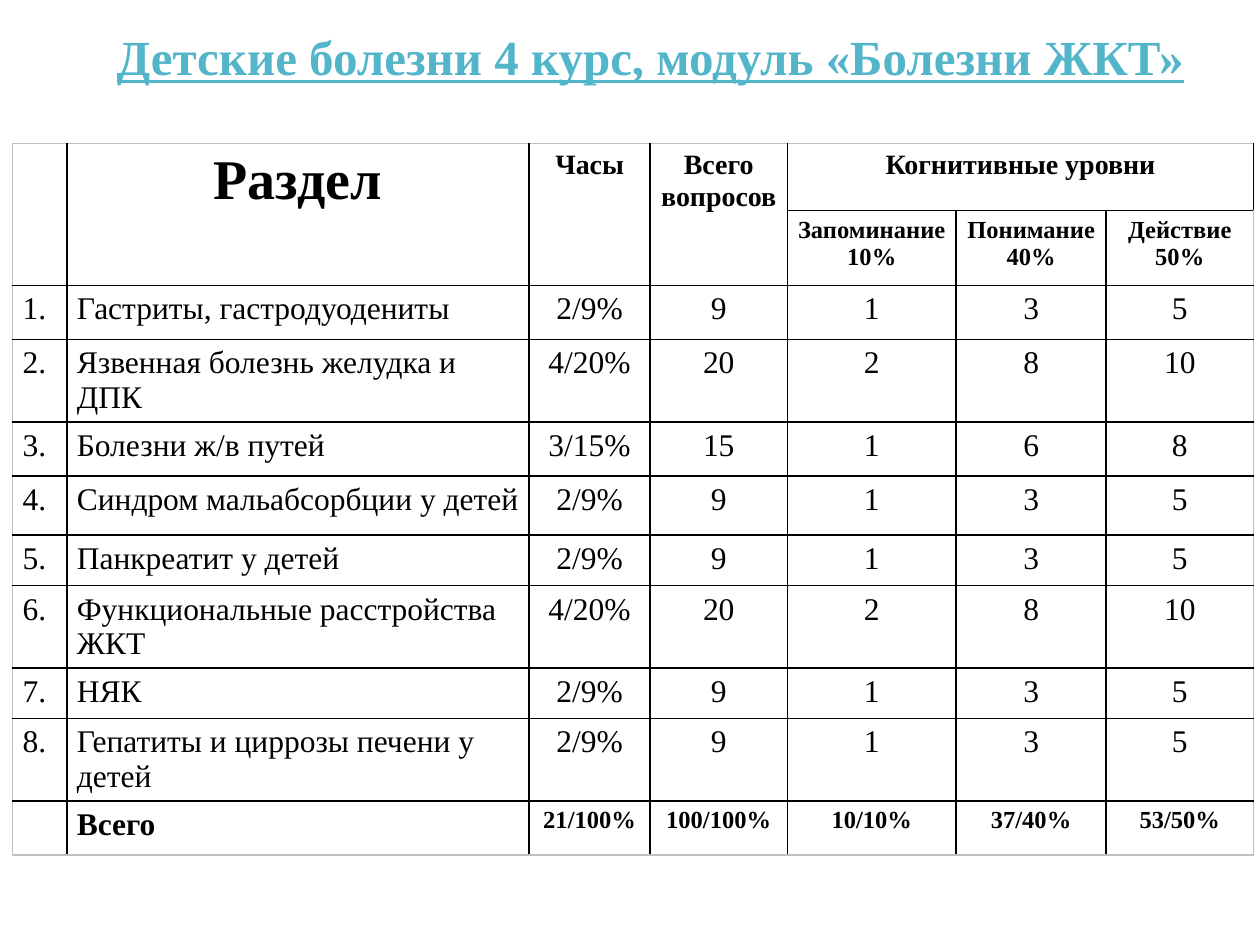
from lxml.etree import SubElement
from pptx import Presentation
from pptx.dml.color import RGBColor
from pptx.enum.text import MSO_ANCHOR, PP_ALIGN
from pptx.oxml.ns import qn
from pptx.util import Inches, Pt

BLACK = RGBColor(0x00, 0x00, 0x00)
FRAME_GREY = RGBColor(0xBF, 0xBF, 0xBF)
TITLE_TEAL = RGBColor(0x53, 0xB5, 0xC9)
FONT = "Times New Roman"


def style_text(frame, size, bold, color, align):
    for paragraph in frame.paragraphs:
        paragraph.alignment = align
        for run in paragraph.runs:
            run.font.name = FONT
            run.font.size = Pt(size)
            run.font.bold = bold
            run.font.color.rgb = color


def add_border(cell, side, color):
    line = SubElement(cell._tc.get_or_add_tcPr(), qn(f"a:ln{side}"), w=str(Pt(1)))
    fill = SubElement(line, qn("a:solidFill"))
    SubElement(fill, qn("a:srgbClr"), val=str(color))


prs = Presentation()
prs.slide_width, prs.slide_height = Inches(10), Inches(7.5)
slide = prs.slides.add_slide(prs.slide_layouts[6])

# Table content: two header rows, eight topics, totals
header = [
    ["", "Раздел", "Часы", "Всего вопросов", "Когнитивные уровни", "", ""],
    ["", "", "", "", "Запоминание\n10%", "Понимание\n40%", "Действие\n50%"],
]
topics = [
    ["Гастриты, гастродуодениты", "2/9%", "9", "1", "3", "5"],
    ["Язвенная болезнь желудка и ДПК", "4/20%", "20", "2", "8", "10"],
    ["Болезни ж/в путей", "3/15%", "15", "1", "6", "8"],
    ["Синдром мальабсорбции у детей", "2/9%", "9", "1", "3", "5"],
    ["Панкреатит у детей", "2/9%", "9", "1", "3", "5"],
    ["Функциональные расстройства ЖКТ", "4/20%", "20", "2", "8", "10"],
    ["НЯК", "2/9%", "9", "1", "3", "5"],
    ["Гепатиты и циррозы печени у детей", "2/9%", "9", "1", "3", "5"],
]
totals = ["", "Всего", "21/100%", "100/100%", "10/10%", "37/40%", "53/50%"]
rows = header + [[f"{n}.", *topic] for n, topic in enumerate(topics, 1)] + [totals]
widths = [0.43, 3.67, 0.96, 1.09, 1.34, 1.19, 1.17]
heights = [0.53, 0.59, 0.43, 0.65, 0.43, 0.47, 0.4, 0.65, 0.4, 0.65, 0.43]
last_row, last_col = len(rows) - 1, len(widths) - 1

# Table grid
table = slide.shapes.add_table(
    len(rows), len(widths), Inches(0.1), Inches(1.14),
    Inches(sum(widths)), Inches(sum(heights))).table
table.first_row = table.horz_banding = False
for column, width in zip(table.columns, widths):
    column.width = Inches(width)
for row, height in zip(table.rows, heights):
    row.height = Inches(height)
for c in range(4):
    table.cell(0, c).merge(table.cell(1, c))
table.cell(0, 4).merge(table.cell(0, last_col))

# Cell text, borders and fill
for r, texts in enumerate(rows):
    for c, text in enumerate(texts):
        cell = table.cell(r, c)
        cell.margin_left = cell.margin_right = Inches(0.08)
        cell.margin_top = cell.margin_bottom = Inches(0.05)
        if text:
            cell.text_frame.text = text
        if r == 0:
            size = 32 if c == 1 else 16
        elif r == 1 or (r == last_row and c > 1):
            size = 14
        else:
            size = 18
        bold = r < len(header) or r == last_row
        centred = r < len(header) or c > 1
        style_text(cell.text_frame, size, bold, BLACK,
                   PP_ALIGN.CENTER if centred else PP_ALIGN.LEFT)
        outer = {"L": c == 0, "R": c == last_col, "T": r == 0, "B": r == last_row}
        for side, on_frame in outer.items():
            add_border(cell, side, FRAME_GREY if on_frame else BLACK)
        cell.fill.background()

# Title
title = slide.shapes.add_textbox(
    Inches(0.75), Inches(0.05), Inches(8.82), Inches(0.73)).text_frame
title.word_wrap = True
title.vertical_anchor = MSO_ANCHOR.BOTTOM
title.margin_bottom = Inches(0.1)
title.text = "Детские болезни 4 курс, модуль «Болезни ЖКТ»"
style_text(title, 28, True, TITLE_TEAL, PP_ALIGN.CENTER)
title.paragraphs[0].runs[0].font.underline = True

prs.save("out.pptx")
